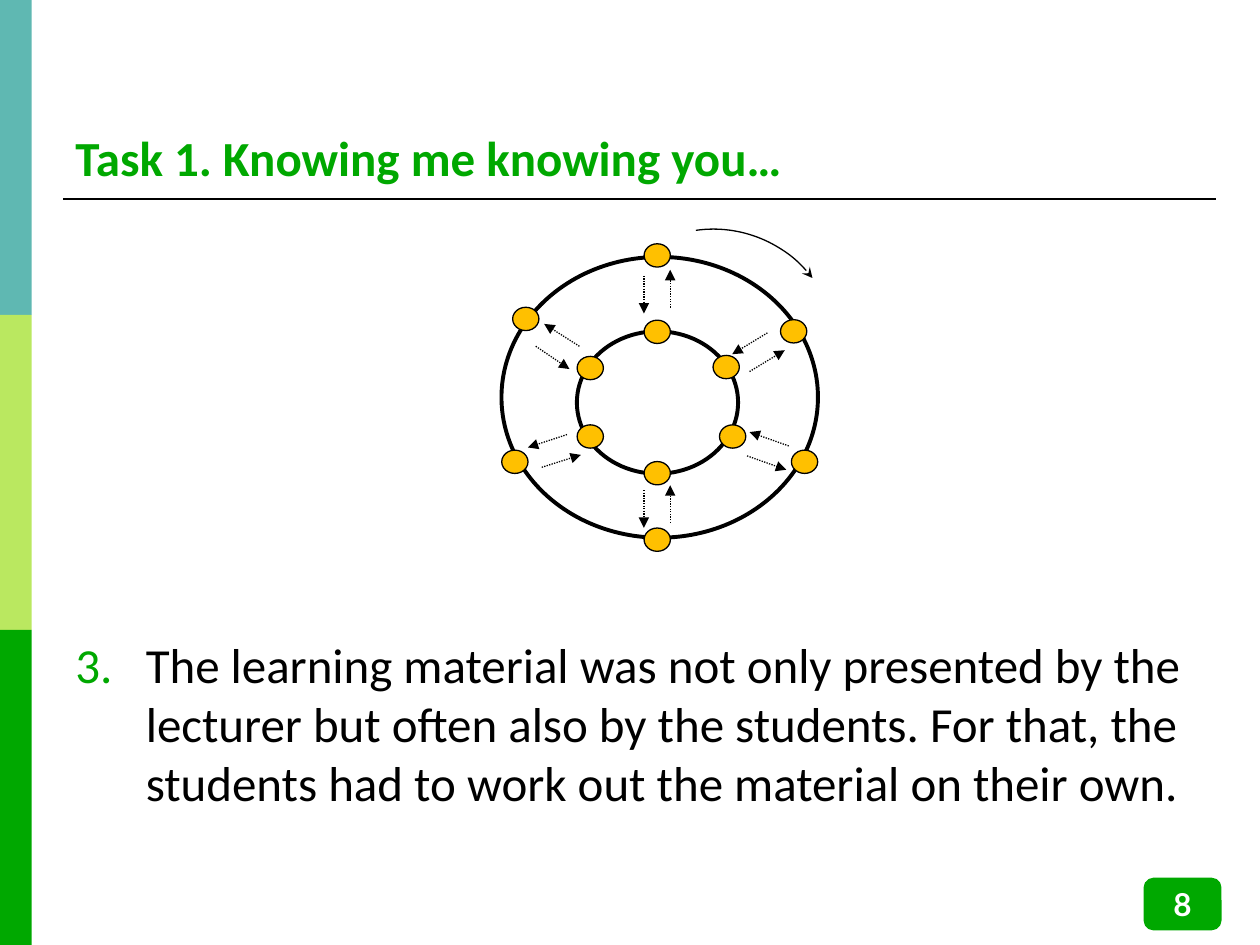
from typing import Any, NamedTuple

from lxml.etree import SubElement
from pptx import Presentation
from pptx.dml.color import RGBColor
from pptx.enum.dml import MSO_LINE
from pptx.enum.shapes import MSO_CONNECTOR, MSO_SHAPE
from pptx.enum.text import MSO_ANCHOR, PP_ALIGN
from pptx.oxml.ns import qn
from pptx.util import Cm, Pt

BLACK, WHITE, GREEN, GOLD = "000000", "FFFFFF", "00A800", "FFC000"


class Box(NamedTuple):
    """A frame in centimetres."""
    x: float
    y: float
    w: float
    h: float


class Dot(NamedTuple):
    """The centre of one student marker."""
    x: float
    y: float


class Arrow(NamedTuple):
    """The two ends of one dotted arrow."""
    x1: float
    y1: float
    x2: float
    y2: float


BANDS = ["5FB8B2", "BAE860", GREEN]
RINGS = [Box(10.11, 5.18, 6.38, 5.66), Box(11.63, 6.68, 3.25, 2.87)]
DOTS = [
    Dot(13.25, 5.15), Dot(13.25, 6.69), Dot(10.6, 6.43), Dot(11.9, 7.42),
    Dot(10.38, 9.31), Dot(11.9, 8.8), Dot(13.25, 10.88), Dot(13.25, 9.54),
    Dot(16, 6.68), Dot(14.64, 7.4), Dot(16.22, 9.31), Dot(14.77, 8.8),
]
ARROWS = [
    Arrow(12.98, 5.56, 12.98, 6.32), Arrow(13.51, 6.2, 13.51, 5.44),
    Arrow(12.98, 9.88, 12.98, 10.64), Arrow(13.51, 10.54, 13.51, 9.78),
    Arrow(11.68, 6.98, 10.97, 6.53), Arrow(10.8, 6.98, 11.48, 7.44),
    Arrow(11.43, 8.76, 10.64, 9.02), Arrow(10.92, 9.42, 11.71, 9.17),
    Arrow(15.47, 6.71, 14.76, 7.14), Arrow(15.11, 7.49, 15.82, 7.06),
    Arrow(15.9, 8.99, 15.11, 8.71), Arrow(15.06, 9.19, 15.85, 9.47),
]


def paint(target: Any, color: str) -> None:
    """Give a fill a solid hex colour."""
    target.solid()
    target.fore_color.rgb = RGBColor.from_string(color)


def stroke(line: Any, width: float, color: str = BLACK) -> None:
    """Set the width and colour of a line."""
    line.width = Pt(width)
    paint(line.fill, color)


def tip(line: Any, kind: str) -> None:
    """Put an arrowhead at the end of a line."""
    SubElement(line.fill._xPr, qn("a:tailEnd"), type=kind)


def shape(slide: Any, kind: MSO_SHAPE, box: Box, fill: str = "",
          width: float = 0, color: str = BLACK) -> Any:
    """Draw a preset shape with an optional fill and outline."""
    item = slide.shapes.add_shape(kind, *map(Cm, box))
    item.shadow.inherit = False
    if fill:
        paint(item.fill, fill)
    else:
        item.fill.background()
    if width:
        stroke(item.line, width, color)
    else:
        item.line.fill.background()
    return item


def link(slide: Any, ends: Arrow, width: float) -> Any:
    """Draw a straight line without a shadow."""
    item = slide.shapes.add_connector(MSO_CONNECTOR.STRAIGHT, *map(Cm, ends))
    SubElement(item._element.spPr, qn("a:effectLst"))
    stroke(item.line, width)
    return item


def dart(slide: Any, ends: Arrow) -> None:
    """Draw a dotted arrow."""
    line = link(slide, ends, 0.75).line
    line.dash_style = MSO_LINE.ROUND_DOT
    tip(line, "triangle")


def write(para: Any, text: str, size: float, color: str,
          bold: bool = False, face: str = "Calibri") -> None:
    """Add one styled run to a paragraph."""
    run = para.add_run()
    run.text = text
    run.font.size, run.font.bold, run.font.name = Pt(size), bold, face
    paint(run.font.fill, color)


def panel(slide: Any, box: Box, anchor: MSO_ANCHOR) -> Any:
    """Add a wrapping text box and return its first paragraph."""
    frame = slide.shapes.add_textbox(*map(Cm, box)).text_frame
    frame.word_wrap = True
    frame.vertical_anchor = anchor
    return frame.paragraphs[0]


def number(para: Any, start: int, color: str) -> None:
    """Number a paragraph with a hanging indent."""
    props = para._p.get_or_add_pPr()
    props.set("marL", str(Cm(1.42)))
    props.set("indent", str(-Cm(1.42)))
    tint = SubElement(props, qn("a:buClr"))
    SubElement(tint, qn("a:srgbClr"), val=color)
    SubElement(props, qn("a:buFont"), typeface="Calibri")
    SubElement(props, qn("a:buAutoNum"), type="arabicPeriod", startAt=str(start))


def main() -> None:
    """Build and save the slide."""
    deck = Presentation()
    deck.slide_width, deck.slide_height = Cm(25.4), Cm(19.05)
    slide = deck.slides.add_slide(deck.slide_layouts[6])

    for row, color in enumerate(BANDS):
        shape(slide, MSO_SHAPE.RECTANGLE, Box(0, row * 6.35, 0.64, 6.35), color)
    link(slide, Arrow(1.27, 4.01, 24.51, 4.01), 1.5)

    title = panel(slide, Box(1.27, 0.71, 23.24, 3.18), MSO_ANCHOR.BOTTOM)
    write(title, "Task 1. Knowing me knowing you…", 28, GREEN, True)

    body = panel(slide, Box(1.27, 12.67, 23.24, 4.35), MSO_ANCHOR.TOP)
    number(body, 3, GREEN)
    write(body, "The learning material was not only presented by the lecturer "
          "but often also by the students. For that, the students had to work "
          "out the material on their own.", 28, BLACK)

    for ring in RINGS:
        shape(slide, MSO_SHAPE.OVAL, ring, WHITE, 2.25)
    for dot in DOTS:
        box = Box(dot.x - 0.265, dot.y - 0.235, 0.53, 0.47)
        shape(slide, MSO_SHAPE.FLOWCHART_CONNECTOR, box, GOLD, 0.75)
    for ends in ARROWS:
        dart(slide, ends)

    turn = shape(slide, MSO_SHAPE.ARC, Box(11.86, 4.62, 5.04, 5.04), width=0.75)
    for side, angle in enumerate((262, 322.5)):
        turn.adjustments[side] = angle * 0.6
    tip(turn.line, "stealth")

    badge = shape(slide, MSO_SHAPE.ROUNDED_RECTANGLE,
                  Box(23.09, 17.73, 1.5, 0.99), GREEN, 2, GREEN)
    badge.text_frame.vertical_anchor = MSO_ANCHOR.MIDDLE
    page = badge.text_frame.paragraphs[0]
    page.alignment = PP_ALIGN.CENTER
    write(page, "8", 18, WHITE, True, "Lato")

    deck.save("out.pptx")


if __name__ == "__main__":
    main()
